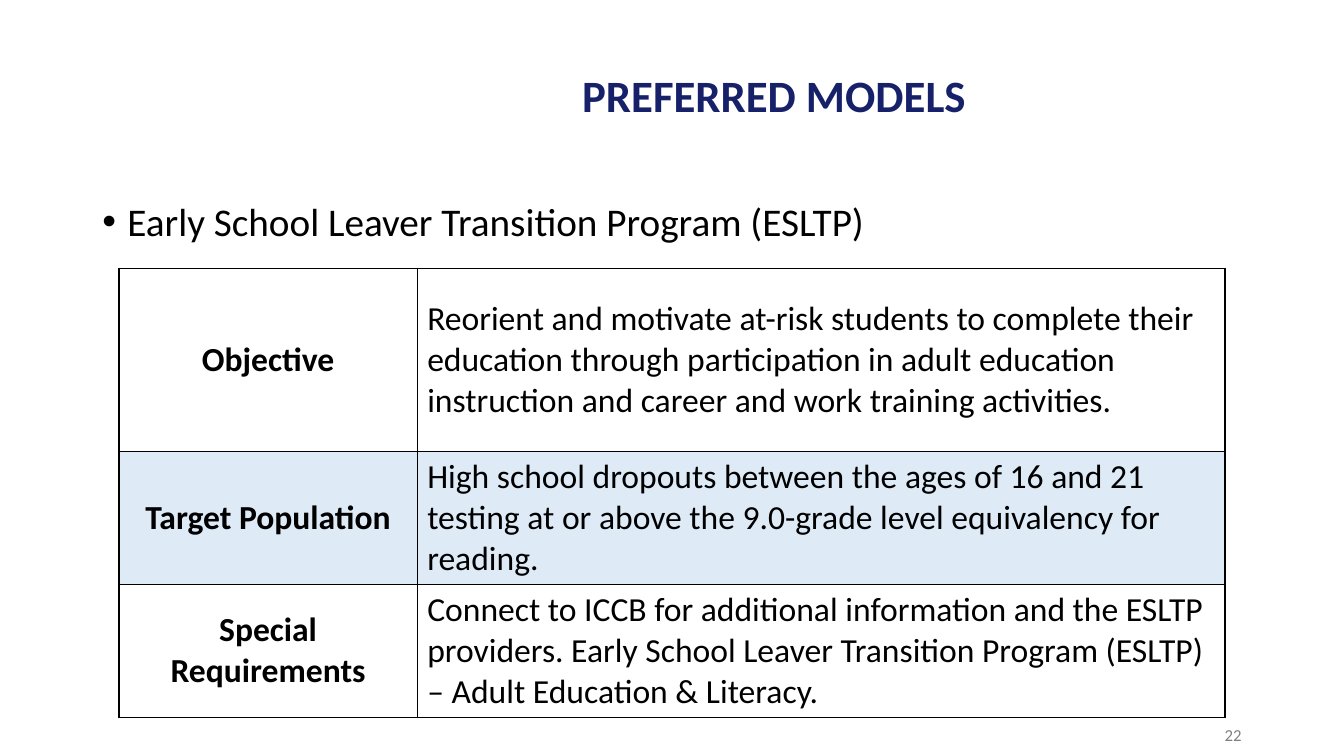
"""Build the slide on the preferred model for early school leavers."""
from dataclasses import dataclass

from lxml.etree import SubElement
from pptx import Presentation
from pptx.dml.color import RGBColor
from pptx.enum.text import MSO_ANCHOR, PP_ALIGN
from pptx.oxml.ns import qn
from pptx.slide import Slide
from pptx.table import _Cell
from pptx.text.text import TextFrame, _Paragraph
from pptx.util import Pt

BLACK, NAVY, GREY, PALE = "000000", "172169", "808080", "DEEBF7"
LEFT, MID, RIGHT = PP_ALIGN.LEFT, PP_ALIGN.CENTER, PP_ALIGN.RIGHT


@dataclass
class Box:
    left: float
    top: float
    width: float
    height: float


@dataclass
class Row:
    label: str
    detail: str
    height: float
    fill: str = ""
    anchor: MSO_ANCHOR = MSO_ANCHOR.TOP


ROWS = [
    Row("Objective",
        "Reorient and motivate at-risk students to complete their education through "
        "participation in adult education instruction and career and work training activities.",
        131, anchor=MSO_ANCHOR.MIDDLE),
    Row("Target Population",
        "High school dropouts between the ages of 16 and 21 testing at or above the "
        "9.0-grade level equivalency for reading.",
        95, fill=PALE),
    Row("Special Requirements",
        "Connect to ICCB for additional information and the ESLTP providers. Early School "
        "Leaver Transition Program (ESLTP) – Adult Education & Literacy.",
        95),
]


def color(code: str) -> RGBColor:
    return RGBColor.from_string(code)


def write(frame: TextFrame, text: str, *, size: float, ink: str = BLACK,
          bold: bool = False, align: PP_ALIGN = LEFT, line: float = 1.0) -> _Paragraph:
    frame.word_wrap = True
    para = frame.paragraphs[0]
    para.alignment = align
    para.line_spacing = line
    run = para.add_run()
    run.text = text
    run.font.name = "Calibri"
    run.font.size = Pt(size)
    run.font.bold = bold
    run.font.color.rgb = color(ink)
    return para


def add_text(slide: Slide, box: Box, anchor: MSO_ANCHOR, text: str, **style) -> _Paragraph:
    shape = slide.shapes.add_textbox(Pt(box.left), Pt(box.top), Pt(box.width), Pt(box.height))
    shape.text_frame.vertical_anchor = anchor
    return write(shape.text_frame, text, **style)


def bullet(para: _Paragraph, indent: float) -> None:
    props = para._p.get_or_add_pPr()
    props.set("marL", str(Pt(indent)))
    props.set("indent", str(-Pt(indent)))
    SubElement(props, qn("a:buFont"), typeface="Arial")
    SubElement(props, qn("a:buChar"), char="•")


def border(cell: _Cell, width: float) -> None:
    props = cell._tc.get_or_add_tcPr()
    for side in ("lnL", "lnR", "lnT", "lnB"):
        edge = SubElement(props, qn(f"a:{side}"), w=str(Pt(width)))
        fill = SubElement(edge, qn("a:solidFill"))
        SubElement(fill, qn("a:srgbClr"), val=BLACK)


def fill_cell(cell: _Cell, text: str, row: Row, anchor: MSO_ANCHOR, **style) -> None:
    border(cell, 1)
    if row.fill:
        cell.fill.solid()
        cell.fill.fore_color.rgb = color(row.fill)
    else:
        cell.fill.background()
    cell.vertical_anchor = anchor
    write(cell.text_frame, text, size=24, **style)


def add_grid(slide: Slide, left: float, top: float, widths: list[float], rows: list[Row]) -> None:
    height = sum(row.height for row in rows)
    grid = slide.shapes.add_table(len(rows), len(widths), Pt(left), Pt(top),
                                  Pt(sum(widths)), Pt(height)).table
    grid.first_row = grid.horz_banding = False
    for col, width in zip(grid.columns, widths):
        col.width = Pt(width)
    for num, row in enumerate(rows):
        grid.rows[num].height = Pt(row.height)
        fill_cell(grid.cell(num, 0), row.label, row, MSO_ANCHOR.MIDDLE, bold=True, align=MID)
        fill_cell(grid.cell(num, 1), row.detail, row, row.anchor)


def main() -> None:
    deck = Presentation()
    deck.slide_width, deck.slide_height = Pt(960), Pt(540)
    slide = deck.slides.add_slide(deck.slide_layouts[6])
    add_text(slide, Box(253, 48, 600, 44), MSO_ANCHOR.MIDDLE, "PREFERRED MODELS",
             size=32, ink=NAVY, bold=True, align=MID, line=0.9)
    topic = add_text(slide, Box(66, 141, 828, 320), MSO_ANCHOR.TOP,
                     "Early School Leaver Transition Program (ESLTP)", size=28, line=0.9)
    bullet(topic, 18)
    add_text(slide, Box(678, 510.5, 216, 28.8), MSO_ANCHOR.MIDDLE, "22",
             size=12, ink=GREY, align=RIGHT)
    add_grid(slide, 85, 191.5, [213, 577], ROWS)
    deck.save("out.pptx")


if __name__ == "__main__":
    main()
